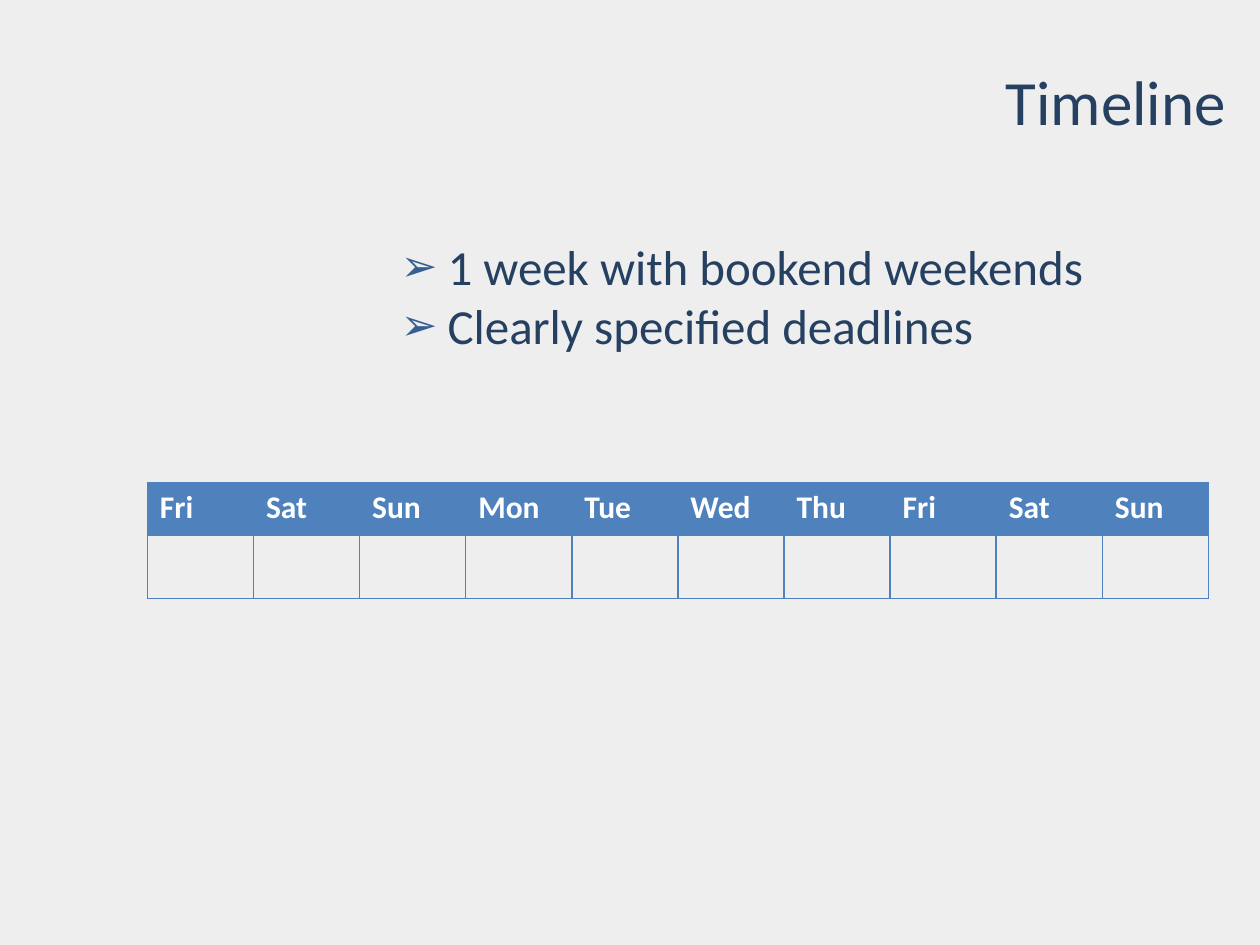
from dataclasses import dataclass

from lxml.etree import SubElement
from pptx import Presentation
from pptx.dml.color import RGBColor
from pptx.enum.text import MSO_ANCHOR, PP_ALIGN
from pptx.oxml.ns import qn
from pptx.util import Cm, Pt


@dataclass(frozen=True)
class Theme:
    font: str = "Calibri"
    background: str = "EEEEEE"
    text: str = "254061"
    bullet: str = "376092"
    accent: str = "4F81BD"
    header_text: str = "FFFFFF"
    title_size: int = 36
    body_size: int = 28
    table_size: int = 18
    border_width: int = 1


THEME = Theme()
WEEK = ["Mon", "Tue", "Wed", "Thu", "Fri", "Sat", "Sun"]
DAYS = WEEK[4:] + WEEK


def place(shape, left, top, width, height):
    shape.left, shape.top = Cm(left), Cm(top)
    shape.width, shape.height = Cm(width), Cm(height)


def format_runs(paragraph, size, color, bold=False):
    for run in paragraph.runs:
        run.font.name = THEME.font
        run.font.size = Pt(size)
        run.font.bold = bold
        run.font.color.rgb = RGBColor.from_string(color)


def add_bullet(paragraph, character, indent):
    properties = paragraph._p.get_or_add_pPr()
    properties.set("marL", str(indent))
    properties.set("indent", str(-indent))
    color = SubElement(properties, qn("a:buClr"))
    SubElement(color, qn("a:srgbClr"), val=THEME.bullet)
    SubElement(properties, qn("a:buSzPct"), val="90000")
    SubElement(properties, qn("a:buChar"), char=character)


def set_title(slide, text):
    title = slide.shapes.title
    place(title, 6.55, 0.64, 18.42, 2.75)
    text_frame = title.text_frame
    text_frame.text = text
    text_frame.vertical_anchor = MSO_ANCHOR.MIDDLE
    paragraph = text_frame.paragraphs[0]
    paragraph.alignment = PP_ALIGN.RIGHT
    format_runs(paragraph, THEME.title_size, THEME.text)


def set_list(slide, items):
    body = slide.placeholders[1]
    place(body, 7.82, 4.65, 17.15, 12.9)
    body.text_frame.text = "\n".join(items)
    for paragraph in body.text_frame.paragraphs:
        add_bullet(paragraph, "➢", Cm(0.95))
        paragraph.space_before = Pt(0)
        format_runs(paragraph, THEME.body_size, THEME.text)


def set_borders(cell):
    properties = cell._tc.get_or_add_tcPr()
    for side in ("lnL", "lnR", "lnT", "lnB"):
        line = SubElement(properties, qn(f"a:{side}"), w=str(Pt(THEME.border_width)))
        fill = SubElement(line, qn("a:solidFill"))
        SubElement(fill, qn("a:srgbClr"), val=THEME.accent)


def add_day_table(slide, days):
    frame = slide.shapes.add_table(2, len(days), Cm(2.97), Cm(9.73), Cm(21.39), Cm(2.34))
    table = frame.table
    table.horz_banding = False
    for row, height in zip(table.rows, (1.07, 1.27)):
        row.height = Cm(height)
    for column, day in enumerate(days):
        header, entry = table.cell(0, column), table.cell(1, column)
        header.text_frame.text = day
        format_runs(header.text_frame.paragraphs[0], THEME.table_size, THEME.header_text, bold=True)
        for cell in (header, entry):
            set_borders(cell)
        header.fill.solid()
        header.fill.fore_color.rgb = RGBColor.from_string(THEME.accent)
        entry.fill.background()


def main():
    presentation = Presentation()
    presentation.slide_width, presentation.slide_height = Cm(25.4), Cm(19.05)
    slide = presentation.slides.add_slide(presentation.slide_layouts[1])
    background = slide.background.fill
    background.solid()
    background.fore_color.rgb = RGBColor.from_string(THEME.background)
    set_title(slide, "Timeline")
    set_list(slide, ["1 week with bookend weekends", "Clearly specified deadlines"])
    add_day_table(slide, DAYS)
    presentation.save("out.pptx")


if __name__ == "__main__":
    main()
